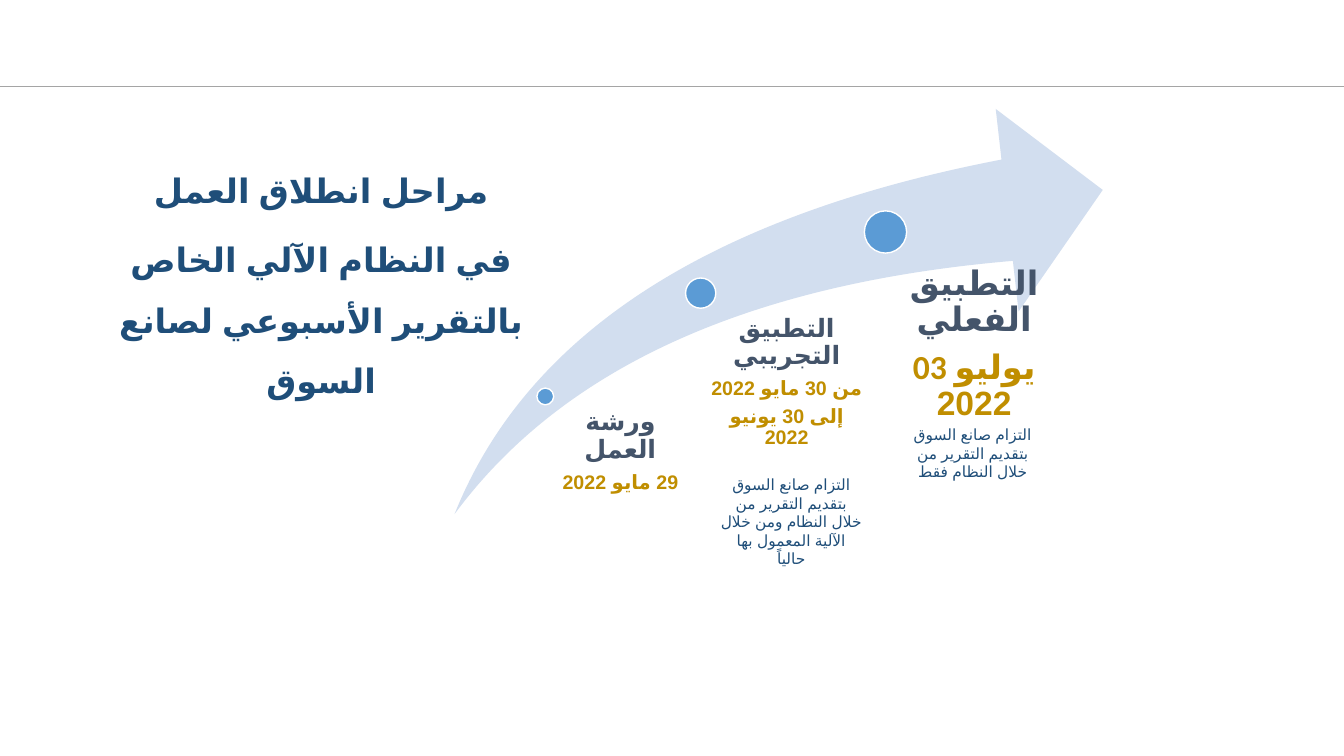
from lxml import etree
from pptx import Presentation
from pptx.dml.color import RGBColor
from pptx.enum.lang import MSO_LANGUAGE_ID
from pptx.enum.shapes import MSO_CONNECTOR, MSO_SHAPE
from pptx.enum.text import MSO_ANCHOR, MSO_AUTO_SIZE, PP_ALIGN
from pptx.oxml.ns import qn
from pptx.util import Pt

STRAIGHT = MSO_CONNECTOR.STRAIGHT
SWOOSH, OVAL = MSO_SHAPE.SWOOSH_ARROW, MSO_SHAPE.OVAL
TOP, CENTER = MSO_ANCHOR.TOP, PP_ALIGN.CENTER
FIT, FIXED = MSO_AUTO_SIZE.SHAPE_TO_FIT_TEXT, MSO_AUTO_SIZE.NONE
ARABIC = MSO_LANGUAGE_ID.ARABIC

NAVY = RGBColor(0x1F, 0x4E, 0x79)
SLATE = RGBColor(0x44, 0x54, 0x6A)
GOLD = RGBColor(0xC0, 0x8E, 0x00)
BLUE = RGBColor(0x5B, 0x9B, 0xD5)
PALE = RGBColor(0xD2, 0xDE, 0xEF)
GRAY = RGBColor(0xA5, 0xA5, 0xA5)
WHITE = RGBColor(0xFF, 0xFF, 0xFF)


def write(frame, text, size=11, color=NAVY, bold=False, rtl=True, line=1.0, after=0):
    """Add one centred paragraph, filling the frame's empty first one if there is one."""
    para = frame.paragraphs[0]
    if para.runs:
        para = frame.add_paragraph()
    para.alignment = CENTER
    para.line_spacing = line
    para.space_before = Pt(0)
    para.space_after = Pt(after)
    if rtl:
        para._p.get_or_add_pPr().set("rtl", "1")
    run = para.add_run()
    run.text = text
    font = run.font
    font.name = "Calibri"
    font.size = Pt(size)
    font.bold = bold
    font.color.rgb = color
    font.language_id = ARABIC
    etree.SubElement(run._r.get_or_add_rPr(), qn("a:cs")).set("typeface", "Arial")


class Deck:
    """Holds the presentation and the slide being drawn."""

    def __init__(self, width, height):
        self.show = Presentation()
        self.show.slide_width = Pt(width)
        self.show.slide_height = Pt(height)
        self.slide = self.show.slides.add_slide(self.show.slide_layouts[5])
        self.shapes = self.slide.shapes

    def rule(self, left, right, y):
        line = self.shapes.add_connector(STRAIGHT, Pt(left), Pt(y), Pt(right), Pt(y))
        line.line.color.rgb = GRAY
        line.line.width = Pt(0.5)
        etree.SubElement(line._element.spPr, qn("a:effectLst"))

    def title(self, box, lines):
        title = self.shapes.title
        title.left, title.top, title.width, title.height = map(Pt, box)
        frame = title.text_frame
        frame.word_wrap = True
        frame.auto_size = FIXED
        frame.vertical_anchor = TOP
        for text in lines:
            write(frame, text, size=24, bold=True, line=1.5, after=6)

    def shape(self, kind, box, fill, edge=None):
        shape = self.shapes.add_shape(kind, *map(Pt, box))
        shape.shadow.inherit = False
        shape.fill.solid()
        shape.fill.fore_color.rgb = fill
        if edge:
            shape.line.color.rgb = edge
            shape.line.width = Pt(1)
        else:
            shape.line.fill.background()
        return shape

    def dot(self, x, y, size):
        self.shape(OVAL, (x - size / 2, y - size / 2, size, size), BLUE, WHITE)

    def text(self, box, fit=FIXED):
        frame = self.shapes.add_textbox(*map(Pt, box)).text_frame
        frame.word_wrap = True
        frame.auto_size = fit
        return frame

    def stage(self, box, inset, name, dates, sizes, rtl=True):
        frame = self.text(box)
        frame.margin_left = Pt(inset)
        frame.margin_top = frame.margin_right = frame.margin_bottom = 0
        big, small = sizes
        rows = [(name, big, SLATE)] + [(date, small, GOLD) for date in dates]
        for text, size, color in rows:
            write(frame, text, size=size, color=color, bold=True, rtl=rtl,
                  line=0.9, after=0.35 * size)

    def note(self, box, text):
        write(self.text(box, FIT), text)


def main():
    deck = Deck(960, 540)
    deck.rule(0, 960, 61.9)
    deck.title((54.7, 103.7, 349.2, 272.2),
               ["مراحل انطلاق العمل",
                "في النظام الآلي الخاص بالتقرير الأسبوعي لصانع السوق"])

    arrow = deck.shape(SWOOSH, (324.7, 77.8, 463, 289.4), PALE)
    arrow.adjustments[0] = arrow.adjustments[1] = 0.25
    for x, y, size in [(389.5, 283.2, 12), (500.5, 209.4, 21.6), (632.5, 165.7, 30.2)]:
        deck.dot(x, y, size)

    deck.stage((385.9, 292.3, 108, 64.8), 6.5, "ورشة العمل",
               ["29 مايو 2022"], (18, 14))
    deck.stage((492.5, 225.4, 127.4, 120.2), 11.5, "التطبيق التجريبي",
               ["من 30 مايو 2022", "إلى 30 يونيو 2022"], (18, 14))
    deck.stage((612, 190.1, 151.9, 151.9), 15.8, "التطبيق الفعلي",
               ["03 يوليو 2022"], (24, 24), rtl=False)

    deck.note((507.6, 336.2, 115.2, 60.5),
              "التزام صانع السوق بتقديم التقرير من خلال النظام ومن خلال الآلية المعمول بها حالياً")
    deck.note((637.2, 300.2, 115.2, 47.5),
              "التزام صانع السوق بتقديم التقرير من خلال النظام فقط")
    deck.show.save("out.pptx")


if __name__ == "__main__":
    main()
